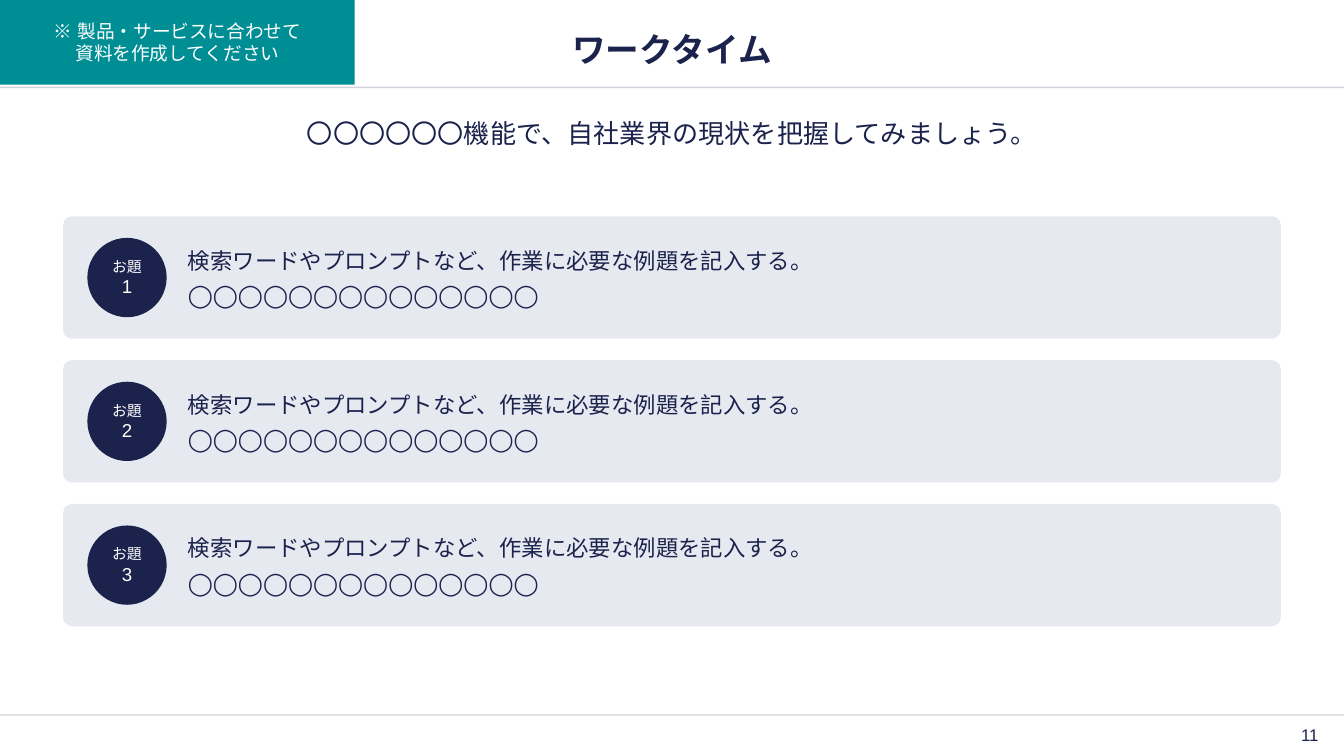
"""Build the work-time slide with three task cards."""
from lxml import etree
from pptx import Presentation
from pptx import util as u
from pptx.dml.color import RGBColor
from pptx.enum import shapes, text
from pptx.oxml.ns import qn

NAVY = RGBColor(0x1B, 0x22, 0x4C)
TEAL = RGBColor(0x00, 0x8E, 0x95)
PALE = RGBColor(0xE6, 0xEA, 0xF0)
WHITE = RGBColor(0xFF, 0xFF, 0xFF)
FONT = "Arial"
LEFT, MID, RIGHT = text.PP_ALIGN.LEFT, text.PP_ALIGN.CENTER, text.PP_ALIGN.RIGHT
TOP, CENTER = text.MSO_ANCHOR.TOP, text.MSO_ANCHOR.MIDDLE
KIND = shapes.MSO_SHAPE

TITLE = "ワークタイム"
LEAD = "〇〇〇〇〇〇機能で、自社業界の現状を把握してみましょう。"
NOTE = ["※ 製品・サービスに合わせて", "資料を作成してください"]
PAGE = "11"
TASK = ["検索ワードやプロンプトなど、作業に必要な例題を記入する。", "◯◯◯◯◯◯◯◯◯◯◯◯◯◯"]
TASKS = [("1", TASK), ("2", TASK), ("3", TASK)]

WIDE = 10
TALL = WIDE * 9 / 16
RULES = [0.65, 5.32]
SIDE = 0.47
SPAN = WIDE - 2 * SIDE
CARD_TOP, CARD_H, STEP = 1.61, 0.91, 1.07
DOT_X, DOT = 0.65, 0.59


def write(shape, lines, sizes, color, align=MID, pads=(0.04,) * 4, anchor=CENTER, gap=0):
    frame = shape.text_frame
    frame.word_wrap = True
    frame.vertical_anchor = anchor
    frame.margin_left, frame.margin_top, frame.margin_right, frame.margin_bottom = map(u.Inches, pads)
    frame.text = "\n".join(lines)
    for i, (para, size) in enumerate(zip(frame.paragraphs, sizes)):
        para.alignment = align
        if i and gap:
            para.space_before = u.Pt(gap)
        for run in para.runs:
            run.font.name = FONT
            run.font.size = u.Pt(size)
            run.font.color.rgb = color
            etree.SubElement(run._r.rPr, qn("a:ea")).set("typeface", FONT)


def add_box(slide, *place):
    return slide.shapes.add_textbox(*map(u.Inches, place))


def add_form(slide, kind, fill, *place):
    form = slide.shapes.add_shape(kind, *map(u.Inches, place))
    form.shadow.inherit = False
    form.fill.solid()
    form.fill.fore_color.rgb = fill
    form.line.fill.background()
    return form


def add_rule(slide, y):
    rule = slide.shapes.add_connector(
        shapes.MSO_CONNECTOR.STRAIGHT, 0, u.Inches(y), u.Inches(WIDE), u.Inches(y))
    rule.line.width = u.Pt(0.75)
    rule.line.color.rgb = NAVY
    props = rule._element.spPr
    tint = props.find(".//" + qn("a:srgbClr"))
    etree.SubElement(tint, qn("a:alpha")).set("val", "20000")
    etree.SubElement(props, qn("a:effectLst"))


def add_card(slide, y, number, lines):
    card = add_form(slide, KIND.ROUNDED_RECTANGLE, PALE, SIDE, y, SPAN, CARD_H)
    card.adjustments[0] = 0.07
    write(card, lines, [12, 12], NAVY, LEFT, (0.91, 0.08, 0.08, 0.08), gap=4)
    dot = add_form(slide, KIND.OVAL, NAVY, DOT_X, y + (CARD_H - DOT) / 2, DOT, DOT)
    write(dot, ["お題", number], [8, 10], WHITE, pads=(0,) * 4)


def main():
    deck = Presentation()
    deck.slide_width, deck.slide_height = u.Inches(WIDE), u.Inches(TALL)
    slide = deck.slides.add_slide(deck.slide_layouts[6])

    for y in RULES:
        add_rule(slide, y)

    title = add_box(slide, SIDE, 0.17, SPAN, 0.39)
    write(title, [TITLE], [18], NAVY)
    title.text_frame.paragraphs[0].runs[0].font.bold = True
    write(add_box(slide, SIDE, 0.83, SPAN, 0.63), [LEAD], [14], NAVY, anchor=TOP)
    write(add_box(slide, 9.46, 5.37, 0.39, 0.2), [PAGE], [9], NAVY, RIGHT)

    for i, (number, lines) in enumerate(TASKS):
        add_card(slide, CARD_TOP + i * STEP, number, lines)

    note = add_form(slide, KIND.RECTANGLE, TEAL, 0, 0, 2.64, 0.63)
    write(note, NOTE, [10, 10], WHITE)
    deck.save("out.pptx")


if __name__ == "__main__":
    main()
